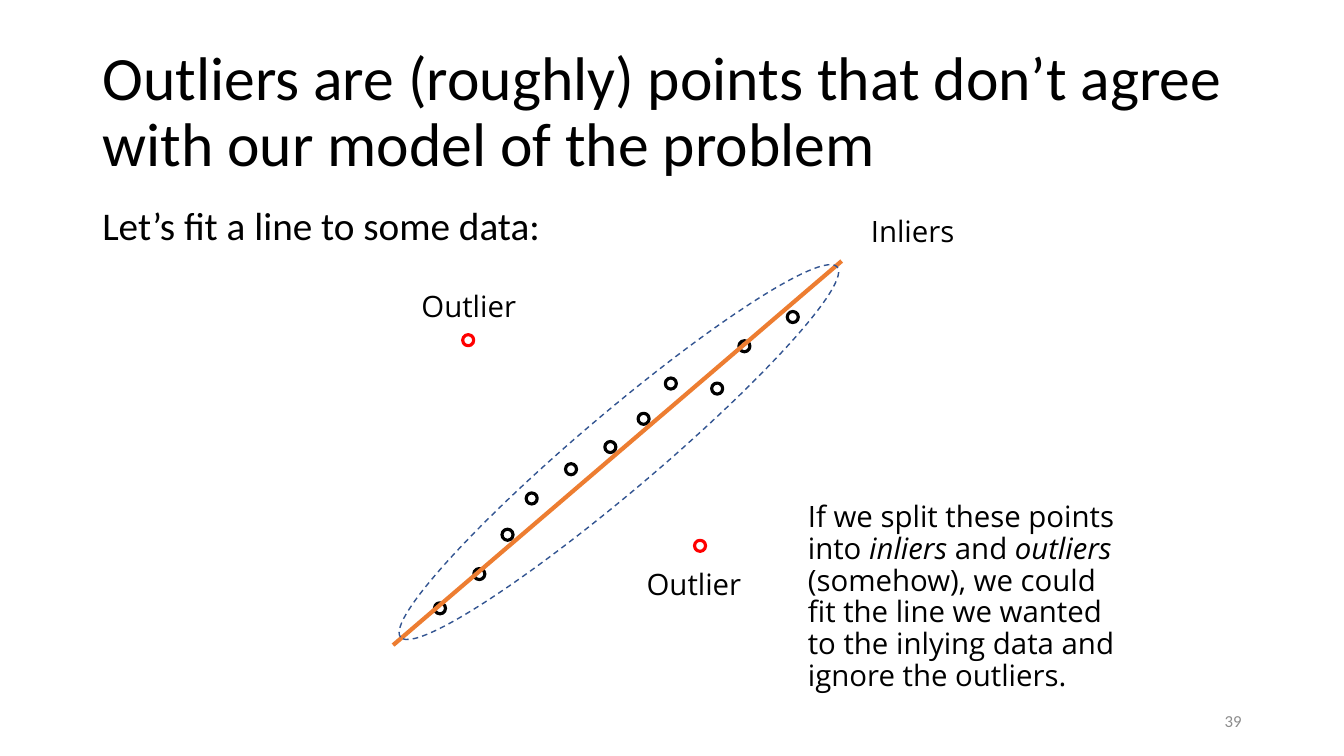
from dataclasses import dataclass
from lxml.etree import SubElement
from pptx import Presentation
from pptx.dml.color import RGBColor
from pptx.enum.dml import MSO_LINE
from pptx.enum.shapes import MSO_CONNECTOR, MSO_SHAPE
from pptx.enum.text import MSO_ANCHOR, MSO_AUTO_SIZE, PP_ALIGN
from pptx.oxml.ns import qn
from pptx.util import Inches, Pt


@dataclass(frozen=True)
class Theme:
    heading_font: str = "Calibri"
    label_font: str = "Open Sans"
    title_size: float = 44
    lead_size: float = 28
    label_size: float = 21
    number_size: float = 12
    ink: str = "000000"
    muted: str = "8C8C8C"
    outlier: str = "FF0000"
    fit: str = "ED7D31"
    region: str = "325491"


THEME = Theme()

# Grid of 160 columns by 90 rows
SLIDE_WIDTH, SLIDE_HEIGHT = Inches(13.333), Inches(7.5)
COLUMNS, ROWS = 160, 90
MARGIN, CONTENT_WIDTH = 11, 138
POINT_DIAMETER = 1.32
LABEL_WIDTH, LABEL_HEIGHT = 16.3, 5.8

# Centres of the data points, from lower left to upper right
INLIERS = [
    (52.38, 72.42), (57.06, 68.34), (60.42, 63.66), (63.3, 59.34),
    (67.98, 55.86), (72.66, 53.22), (76.62, 49.86), (79.86, 45.66),
    (85.38, 46.26), (88.62, 41.22), (94.38, 37.74),
]
OUTLIERS = [(55.74, 40.5), (83.34, 64.98)]
LABELS = [("Inliers", 102.5, 25.3), ("Outlier", 49, 34.2), ("Outlier", 75.8, 67.3)]
NOTE = [
    ("If we split these points into ", False),
    ("inliers", True),
    (" and ", False),
    ("outliers", True),
    (" (somehow), we could fit the line we wanted to the inlying data "
     "and ignore the outliers.", False),
]


def across(columns):
    return round(SLIDE_WIDTH * columns / COLUMNS)


def down(rows):
    return round(SLIDE_HEIGHT * rows / ROWS)


def grid_box(left, top, width, height):
    return across(left), down(top), across(width), down(height)


def write_text(shape, runs, size, font, color=THEME.ink, align=PP_ALIGN.LEFT,
               anchor=MSO_ANCHOR.TOP, line_spacing=0.9):
    frame = shape.text_frame
    frame.word_wrap = True
    frame.auto_size = MSO_AUTO_SIZE.NONE
    frame.vertical_anchor = anchor
    paragraph = frame.paragraphs[0]
    paragraph.alignment = align
    paragraph.line_spacing = line_spacing
    for text, italic in runs:
        run = paragraph.add_run()
        run.text = text
        run.font.name = font
        run.font.size = Pt(size)
        run.font.italic = italic
        run.font.color.rgb = RGBColor.from_string(color)


def add_title(slide, text):
    title = slide.shapes.title
    title.left, title.top, title.width, title.height = grid_box(
        MARGIN, 4.8, CONTENT_WIDTH, 17.4)
    write_text(title, [(text, False)], THEME.title_size, THEME.heading_font,
               anchor=MSO_ANCHOR.MIDDLE)


def add_text(slide, box, runs, size, font, **style):
    shape = slide.shapes.add_textbox(*grid_box(*box))
    write_text(shape, runs, size, font, **style)


def add_ellipse(slide, box, color, weight):
    ellipse = slide.shapes.add_shape(MSO_SHAPE.OVAL, *grid_box(*box))
    ellipse.shadow.inherit = False
    ellipse.fill.background()
    ellipse.line.color.rgb = RGBColor.from_string(color)
    ellipse.line.width = Pt(weight)
    return ellipse


def add_points(slide, centres, color):
    for column, row in centres:
        box = (column - POINT_DIAMETER / 2, row - POINT_DIAMETER / 2,
               POINT_DIAMETER, POINT_DIAMETER)
        add_ellipse(slide, box, color, 2.25)


def add_fitted_line(slide, start, end):
    line = slide.shapes.add_connector(
        MSO_CONNECTOR.STRAIGHT, across(start[0]), down(start[1]),
        across(end[0]), down(end[1]))
    line.line.color.rgb = RGBColor.from_string(THEME.fit)
    line.line.width = Pt(3)
    SubElement(line._element.spPr, qn("a:effectLst"))


def main():
    presentation = Presentation()
    presentation.slide_width = SLIDE_WIDTH
    presentation.slide_height = SLIDE_HEIGHT
    slide = presentation.slides.add_slide(presentation.slide_layouts[5])

    # Title, lead sentence and slide number
    add_title(slide, "Outliers are (roughly) points that don’t agree "
                     "with our model of the problem")
    add_text(slide, (MARGIN, 24, CONTENT_WIDTH, 57.1),
             [("Let’s fit a line to some data:", False)],
             THEME.lead_size, THEME.heading_font)
    add_text(slide, (113, 83.4, 36, 4.8), [("39", False)],
             THEME.number_size, THEME.heading_font, color=THEME.muted,
             align=PP_ALIGN.RIGHT, anchor=MSO_ANCHOR.MIDDLE, line_spacing=1.0)

    # Data points, fitted line and inlier region
    add_points(slide, INLIERS, THEME.ink)
    add_points(slide, OUTLIERS, THEME.outlier)
    add_fitted_line(slide, (46.8, 76.8), (100.2, 31.08))
    region = add_ellipse(slide, (39.6, 49.2, 68.16, 9.24), THEME.region, 1)
    region.line.dash_style = MSO_LINE.DASH
    region.rotation = 319.7

    # Labels and explanation
    for text, left, top in LABELS:
        add_text(slide, (left, top, LABEL_WIDTH, LABEL_HEIGHT), [(text, False)],
                 THEME.label_size, THEME.label_font)
    add_text(slide, (95, 59.2, 40.3, 28.6), NOTE,
             THEME.label_size, THEME.label_font)

    presentation.save("out.pptx")


if __name__ == "__main__":
    main()
